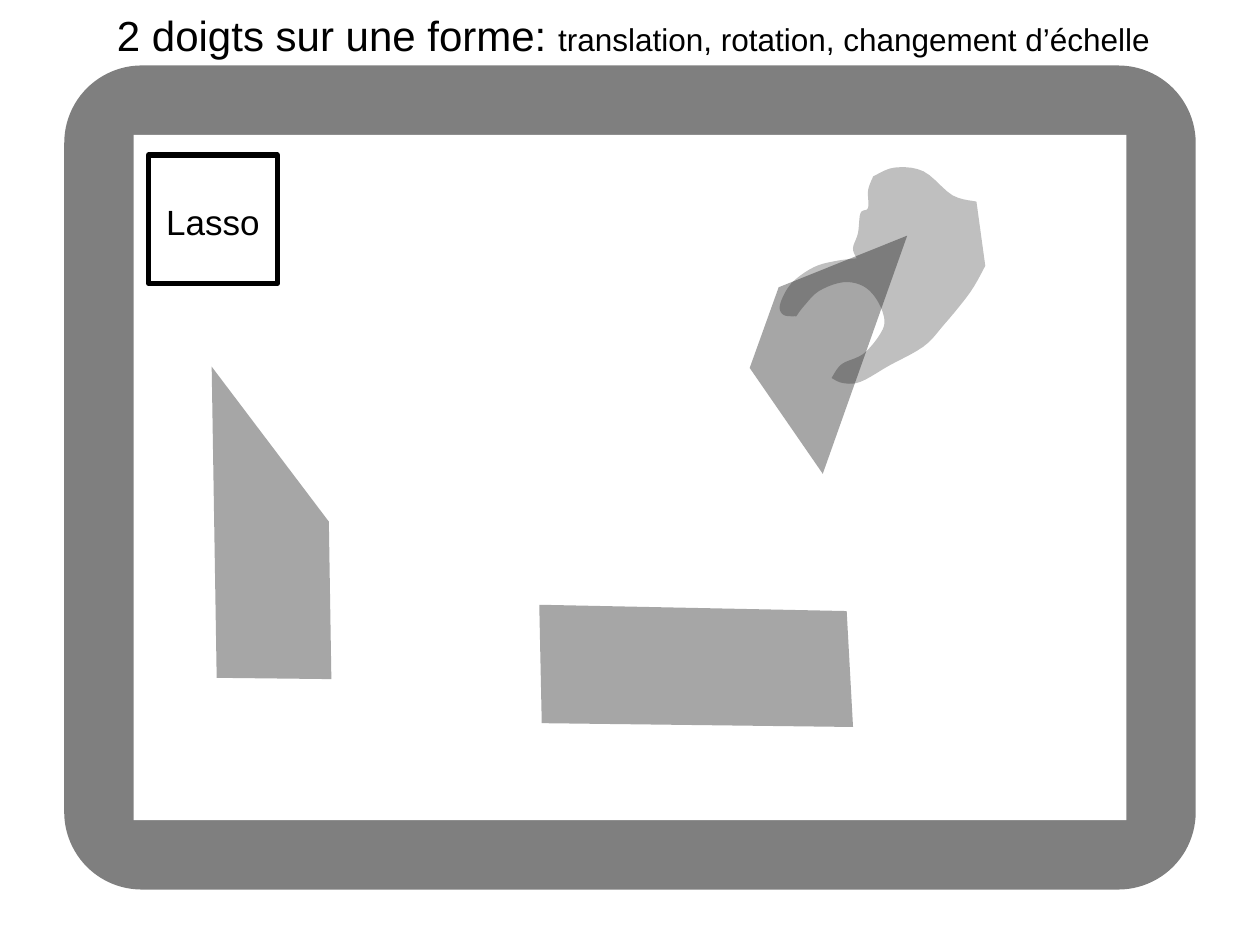
"""Build the slide on two-finger gestures applied to a shape on a tablet."""
from itertools import pairwise

from pptx import Presentation
from pptx.dml.color import RGBColor
from pptx.enum.shapes import MSO_SHAPE
from pptx.enum.text import MSO_AUTO_SIZE, PP_ALIGN
from pptx.oxml.ns import qn
from pptx.util import Inches, Pt
from lxml import etree

RECT, ROUND = MSO_SHAPE.RECTANGLE, MSO_SHAPE.ROUNDED_RECTANGLE
GROW = MSO_AUTO_SIZE.SHAPE_TO_FIT_TEXT
LEFT, CENTER = PP_ALIGN.LEFT, PP_ALIGN.CENTER

INK = {"black": "000000", "white": "FFFFFF", "gray": "A6A6A6"}
FONT = "Arial"

TITLE = [("2 doigts sur une forme: ", 24),
         ("translation, rotation, changement d’échelle", 18)]
BUTTON = [("Lasso", 20)]

TITLE_BOX = (0.83, 0.03, 8.61, 0.51)
BUTTON_BOX = (1.22, 1.54, 0.94, 0.44)
FRAME = (0.51, 0.52, 8.98, 6.54)
BEZEL = 0.55
KEY = (1.18, 1.23, 1.02, 1.02)

SHARD = [(1.72, 5.38), (1.68, 2.91), (2.61, 4.14), (2.63, 5.39)]
SLAB = [(4.28, 4.8), (4.3, 5.74), (6.77, 5.77), (6.72, 4.85)]
KITE = [(6.53, 3.76), (7.2, 1.87), (6.18, 2.28), (5.95, 2.92)]

HAND = {
    "palm": [(7.82, 2.11), (7.7, 2.32), (7.49, 2.58), (7.33, 2.75),
             (7.06, 2.9), (6.83, 3.03), (6.69, 3.04), (6.6, 3)],
    "grip": [(6.6, 3), (6.68, 2.89), (6.85, 2.81), (6.98, 2.66),
             (7.02, 2.54), (6.96, 2.38), (6.85, 2.27), (6.69, 2.24),
             (6.5, 2.31), (6.38, 2.43), (6.32, 2.51)],
    "finger": [(6.32, 2.51), (6.22, 2.5), (6.19, 2.42), (6.28, 2.25),
               (6.46, 2.12), (6.64, 2.07), (6.8, 2.05)],
    "knuckles": [(6.8, 2.05), (6.77, 1.97), (6.81, 1.85), (6.83, 1.69),
                 (6.89, 1.65), (6.89, 1.51), (6.93, 1.4)],
    "back": [(6.93, 1.4), (7.1, 1.33), (7.33, 1.36), (7.56, 1.55),
             (7.75, 1.6)],
}
STEPS = 5


def color(name):
    return RGBColor.from_string(INK[name])


def inset(box, gap):
    left, top, width, height = box
    return left + gap, top + gap, width - 2 * gap, height - 2 * gap


def blend(before, start, end, after, t):
    bend = 2 * before - 5 * start + 4 * end - after
    twist = 3 * (start - end) + after - before
    return start + t * (end - before + t * (bend + t * twist)) / 2


def curve(knots):
    ends = [knots[0], *knots, knots[-1]]
    points = []
    for i in range(len(knots) - 1):
        for step in range(STEPS):
            points.append(tuple(blend(*axis, step / STEPS)
                                for axis in zip(*ends[i:i + 4])))
    return points + [knots[-1]]


def join(arcs):
    points = [spot for knots in arcs.values() for spot in curve(knots)]
    return points[:1] + [b for a, b in pairwise(points) if a != b]


def paint(shape, name, alpha=100):
    shape.shadow.inherit = False
    shape.fill.solid()
    shape.fill.fore_color.rgb = color(name)
    shape.line.fill.background()
    if alpha < 100:
        tone = shape.fill._xPr.find(".//" + qn("a:srgbClr"))
        etree.SubElement(tone, qn("a:alpha")).set("val", str(alpha * 1000))
    return shape


def block(slide, kind, box, name, alpha=100):
    shape = slide.shapes.add_shape(kind, *map(Inches, box))
    return paint(shape, name, alpha)


def outline(slide, points, name, alpha=100):
    spots = [(Inches(x), Inches(y)) for x, y in points]
    pen = slide.shapes.build_freeform(*spots[0])
    pen.add_line_segments(spots[1:], close=True)
    return paint(pen.convert_to_shape(), name, alpha)


def label(slide, box, runs, align, wrap):
    frame = slide.shapes.add_textbox(*map(Inches, box)).text_frame
    frame.word_wrap = wrap
    frame.auto_size = GROW
    line = frame.paragraphs[0]
    line.alignment = align
    for words, size in runs:
        run = line.add_run()
        run.text = words
        run.font.name = FONT
        run.font.size = Pt(size)
        run.font.color.rgb = color("black")


def tablet(slide):
    frame = block(slide, ROUND, FRAME, "black", 50)
    frame.adjustments[0] = 0.094
    block(slide, RECT, inset(FRAME, BEZEL), "white")


def button(slide):
    key = block(slide, RECT, KEY, "white")
    key.line.color.rgb = color("black")
    key.line.width = Pt(3)
    label(slide, BUTTON_BOX, BUTTON, CENTER, False)


def main():
    deck = Presentation()
    deck.slide_width, deck.slide_height = Inches(10), Inches(7.5)
    slide = deck.slides.add_slide(deck.slide_layouts[6])
    tablet(slide)
    for points in (SHARD, SLAB):
        outline(slide, points, "gray")
    button(slide)
    outline(slide, KITE, "gray")
    outline(slide, join(HAND), "black", 25)
    label(slide, TITLE_BOX, TITLE, LEFT, True)
    deck.save("out.pptx")


if __name__ == "__main__":
    main()
